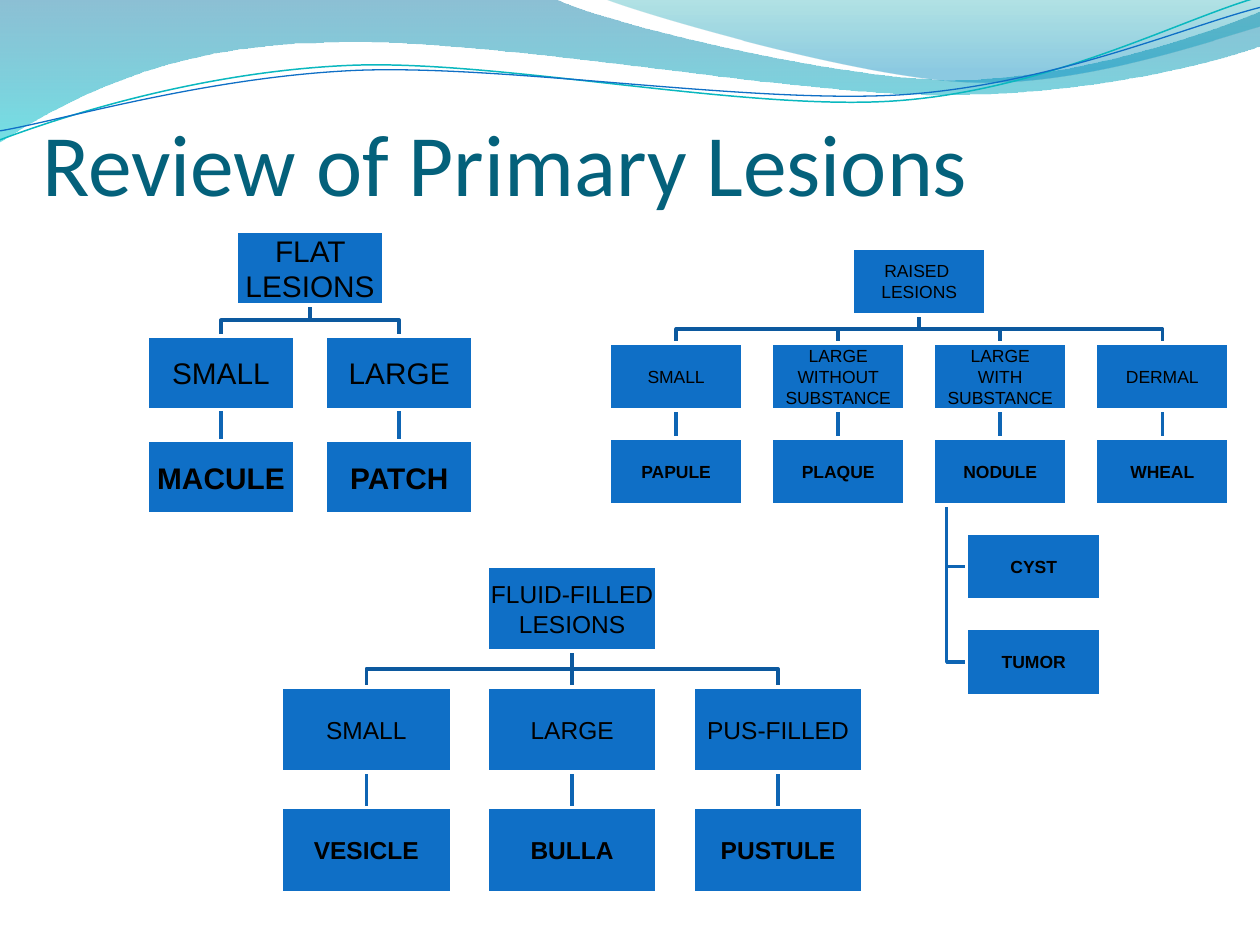
from math import cos, radians, sin

from lxml import etree
from pptx import Presentation
from pptx.dml.color import RGBColor
from pptx.enum.shapes import MSO_SHAPE
from pptx.enum.text import MSO_ANCHOR, MSO_AUTO_SIZE, PP_ALIGN
from pptx.oxml.ns import qn
from pptx.util import Cm, Pt

RECTANGLE = MSO_SHAPE.RECTANGLE
MIDDLE, BOTTOM = MSO_ANCHOR.MIDDLE, MSO_ANCHOR.BOTTOM
CENTER, LEFT = PP_ALIGN.CENTER, PP_ALIGN.LEFT

BLUE = RGBColor(0x0F, 0x6F, 0xC6)
BRANCH_BLUE = RGBColor(0x0C, 0x59, 0x9F)
LEAF_BLUE = RGBColor(0x0E, 0x65, 0xB4)
TEAL = RGBColor(0x0A, 0xB8, 0xBF)
TITLE_TEAL = RGBColor(0x04, 0x61, 0x7B)
WHITE = RGBColor(0xFF, 0xFF, 0xFF)
BLACK = RGBColor(0x00, 0x00, 0x00)
DEEP_BLUE = RGBColor(0x00, 0x74, 0xA1)
AQUA = RGBColor(0x00, 0xC6, 0xCF)
SEA_GREEN = RGBColor(0x00, 0xA1, 0xA9)
SKY_BLUE = RGBColor(0x00, 0x8B, 0xBF)

COLUMN_PITCH, ROW_PITCH, BOX_HEIGHT = 1.21, 0.71, 0.5
HANGING_TRUNK, HANGING_INDENT = 0.1, 0.25
STEM_WIDTH = 0.25
WAVE_TILT = -2.7

RIBBONS = [
    ((-0.03, -0.03, 25.46, 2.9),
     [[(0, -0.03)],
      [(11.18, -0.03)],
      [(12.09, 0.43), (16.87, 1.6), (19.25, 1.6)],
      [(21.67, 1.6), (24.33, 0.66), (25.4, 0.23)],
      [(25.43, 0.91)],
      [(24.97, 1.12), (22.1, 1.93), (18.95, 1.91)],
      [(15.8, 1.91), (9.7, 0.71), (6.53, 0.86)],
      [(3.28, 0.89), (1.17, 2.11), (-0.03, 2.87)]],
     [(0, DEEP_BLUE, 45), (1, AQUA, 55)]),
    ((12.17, -0.03, 13.23, 1.78),
     [[(12.17, -0.03)],
      [(12.93, 0.28), (17.32, 1.57), (19.53, 1.65)],
      [(21.74, 1.75), (24.41, 0.81), (25.4, 0.53)],
      [(25.4, 0)]],
     [(0, SEA_GREEN, 30), (0.8, SKY_BLUE, 45)]),
]
WAVE_LINES = [
    ((-0.05, 0.56, 25.45, 1.8),
     [[(0, 2.82)],
      [(1.22, 2.36), (4.01, 1.45), (7.04, 1.32)],
      [(10.03, 1.19), (15.06, 2.26), (18.11, 2.03)],
      [(21.16, 1.8), (23.83, 0.38), (25.35, -0.05)]],
     TEAL, 0.85),
    ((-0.05, 0.76, 25.48, 1.47),
     [[(0, 2.64)],
      [(1.19, 2.44), (4.17, 1.55), (7.19, 1.42)],
      [(10.24, 1.3), (15.16, 2.11), (18.21, 1.91)],
      [(21.23, 1.7), (23.9, 0.53), (25.4, 0.15)]],
     BLUE, 0.75),
]

FLAT = ("FLAT LESIONS", [("SMALL", ["MACULE"]), ("LARGE", ["PATCH"])])
RAISED = ("RAISED \nLESIONS", [
    ("SMALL", ["PAPULE"]),
    ("LARGE\nWITHOUT\nSUBSTANCE", ["PLAQUE"]),
    ("LARGE\nWITH\nSUBSTANCE", ["NODULE", "CYST", "TUMOR"]),
    ("DERMAL", ["WHEAL"]),
])
FLUID_FILLED = ("FLUID-FILLED\nLESIONS", [
    ("SMALL", ["VESICLE"]),
    ("LARGE", ["BULLA"]),
    ("PUS-FILLED", ["PUSTULE"]),
])


def add_outline(slide, box, segments, closed=False, tilt=0):
    """Build a freeform of lines (one point) and curves (three points) in a box."""
    left, top, width, height = box
    middle_x, middle_y = left + width / 2, top + height / 2
    cosine, sine = cos(radians(-tilt)), sin(radians(-tilt))
    builder = slide.shapes.build_freeform(Cm(left), Cm(top))
    builder.add_line_segments([(Cm(left + width), Cm(top + height))], close=False)
    shape = builder.convert_to_shape()
    shape.shadow.inherit = False
    shape.rotation = tilt
    outline = next(shape.element.iter(qn("a:path")))
    for child in list(outline):
        outline.remove(child)
    for index, segment in enumerate(segments):
        kind = "a:cubicBezTo" if len(segment) == 3 else "a:lnTo" if index else "a:moveTo"
        command = etree.SubElement(outline, qn(kind))
        for x, y in segment:
            across, down = x - middle_x, y - middle_y
            local_x = width / 2 + across * cosine - down * sine
            local_y = height / 2 + across * sine + down * cosine
            etree.SubElement(command, qn("a:pt"), x=str(Cm(local_x)), y=str(Cm(local_y)))
    if closed:
        etree.SubElement(outline, qn("a:close"))
    return shape


def style_line(shape, color, width):
    """Leave the shape unfilled and set its line."""
    shape.fill.background()
    shape.line.color.rgb = color
    shape.line.width = Pt(width)


def add_waves(slide, left, top):
    """Draw the ribbons and thin lines of the header from its corner."""
    def placed(box, segments):
        x, y, width, height = box
        moved = [[(left + a, top + b) for a, b in segment] for segment in segments]
        return (left + x, top + y, width, height), moved

    for box, segments, stops in RIBBONS:
        ribbon = add_outline(slide, *placed(box, segments), closed=True)
        ribbon.line.fill.background()
        ribbon.fill.gradient()
        ribbon.fill.gradient_angle = 270
        for stop, (position, color, _) in zip(ribbon.fill.gradient_stops, stops):
            stop.position = position
            stop.color.rgb = color
        colors = list(ribbon.element.spPr.iter(qn("a:srgbClr")))
        for color_element, (_, _, opacity) in zip(colors, stops):
            etree.SubElement(color_element, qn("a:alpha"), val=str(opacity * 1000))
    for box, segments, color, width in WAVE_LINES:
        wave = add_outline(slide, *placed(box, segments), tilt=WAVE_TILT)
        style_line(wave, color, width)


def add_title(slide, left, top, width, height):
    """Fill the title placeholder and bring it in front of the header."""
    title = slide.shapes.title
    title.left, title.top, title.width, title.height = map(Cm, (left, top, width, height))
    frame = title.text_frame
    frame.auto_size = MSO_AUTO_SIZE.NONE
    frame.vertical_anchor = BOTTOM
    frame.margin_left = frame.margin_right = frame.margin_bottom = 0
    frame.margin_top = Cm(0.13)
    paragraph = frame.paragraphs[0]
    paragraph.alignment = LEFT
    run = paragraph.add_run()
    run.text = "Review of Primary Lesions"
    run.font.name = "Calibri"
    run.font.size = Pt(50)
    run.font.color.rgb = TITLE_TEAL
    title.element.getparent().append(title.element)


def add_box(slide, left, top, width, text, size, bold=False):
    """Add one labelled box, half as high as it is wide."""
    shape = slide.shapes.add_shape(
        RECTANGLE, Cm(left), Cm(top), Cm(width), Cm(width * BOX_HEIGHT))
    shape.shadow.inherit = False
    shape.fill.solid()
    shape.fill.fore_color.rgb = BLUE
    shape.line.color.rgb = WHITE
    shape.line.width = Pt(2)
    frame = shape.text_frame
    frame.word_wrap = True
    frame.vertical_anchor = MIDDLE
    frame.margin_left = frame.margin_right = Cm(0.03)
    frame.margin_top = frame.margin_bottom = Cm(0.03)
    for index, label in enumerate(text.split("\n")):
        paragraph = frame.add_paragraph() if index else frame.paragraphs[0]
        paragraph.alignment = CENTER
        run = paragraph.add_run()
        run.text = label
        run.font.name = "Arial"
        run.font.size = Pt(size)
        run.font.bold = bold
        run.font.color.rgb = BLACK


def add_branch(slide, points, color):
    """Draw a bent line, or a straight stem centred in a narrow box."""
    xs, ys = zip(*points)
    width = max(xs) - min(xs) or STEM_WIDTH
    left = (min(xs) + max(xs) - width) / 2
    box = (left, min(ys), width, max(ys) - min(ys))
    style_line(add_outline(slide, box, [[point] for point in points]), color, 2)


def add_tree(slide, left, top, width, size, tree):
    """Draw a lesion tree from its top left corner, scaled by box width."""
    heading, categories = tree
    pitch, row, height = width * COLUMN_PITCH, width * ROW_PITCH, width * BOX_HEIGHT
    middle = (len(categories) - 1) / 2
    root_left = left + middle * pitch
    root_x, bottom = root_left + width / 2, top + height
    elbow_y = (bottom + top + row) / 2
    boxes = [(root_left, top, width, heading, size)]
    for column, (category, leaves) in enumerate(categories):
        x = left + column * pitch
        center = x + width / 2
        boxes.append((x, top + row, width, category, size))
        boxes.append((x, top + 2 * row, width, leaves[0], size, True))
        add_branch(slide, [(center, bottom + row), (center, top + 2 * row)], LEAF_BLUE)
        elbow = [] if column == middle else [(root_x, elbow_y), (center, elbow_y)]
        add_branch(slide, [(root_x, bottom), *elbow, (center, top + row)], BRANCH_BLUE)
        trunk, indent = x + HANGING_TRUNK * width, x + HANGING_INDENT * width
        for level, name in enumerate(leaves[1:], start=3):
            y = top + level * row
            boxes.append((indent, y, width, name, size, True))
            hanger = [(trunk, bottom + 2 * row), (trunk, y + height / 2), (indent, y + height / 2)]
            add_branch(slide, hanger, LEAF_BLUE)
    for box in boxes:
        add_box(slide, *box)


def main():
    """Build and save the slide."""
    presentation = Presentation()
    presentation.slide_width, presentation.slide_height = Cm(25.4), Cm(19.05)
    slide = presentation.slides.add_slide(presentation.slide_layouts[5])
    add_waves(slide, 0, 0)
    add_title(slide, 0.85, 0.64, 23.65, 3.68)
    add_tree(slide, 2.97, 4.66, 2.97, 17, FLAT)
    add_tree(slide, 12.28, 5, 2.7, 10, RAISED)
    add_tree(slide, 5.67, 11.41, 3.43, 14, FLUID_FILLED)
    presentation.save("out.pptx")


if __name__ == "__main__":
    main()
